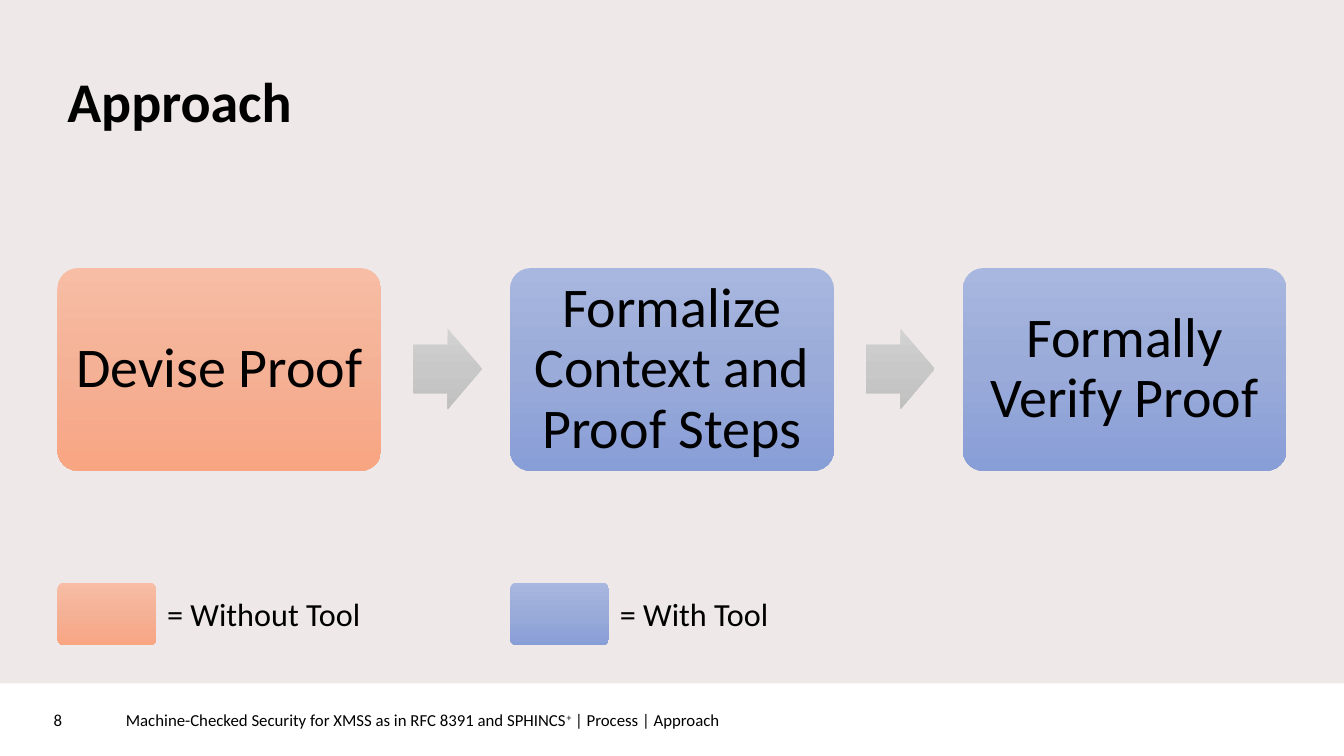
from copy import deepcopy
from dataclasses import dataclass

from pptx import Presentation
from pptx.dml.color import RGBColor
from pptx.enum.shapes import MSO_SHAPE as Preset
from pptx.enum.text import MSO_ANCHOR as Anchor, PP_ALIGN as Align
from pptx.oxml.ns import qn
from pptx.shapes.autoshape import Shape
from pptx.slide import Slide
from pptx.text.text import _Paragraph as Paragraph
from pptx.util import Emu, Pt

EMU_PER_PX = 9144
PAGE_WIDTH, PAGE_HEIGHT = 1333, 750
LEFT = 57
STEP_PITCH = 449
STEP_TOP, STEP_WIDTH, STEP_HEIGHT = 266, 321, 201
ARROW_OFFSET, ARROW_TOP, ARROW_WIDTH, ARROW_HEIGHT = 353, 326, 68, 80
KEY_TOP, KEY_WIDTH, KEY_HEIGHT = 578, 98, 62
FOOTER_TOP, NUMBER_WIDTH = 678, 115

ORANGE = ("F7BDA5", "F5B196", "F8A582")
BLUE = ("A8B7DF", "9AABD9", "889ED7")
GREY = ("D2D2D2", "C8C8C8", "C0C0C0")


@dataclass(frozen=True)
class Step:
    label: str
    shades: tuple[str, str, str]


@dataclass(frozen=True)
class Key:
    label: str
    shades: tuple[str, str, str]


STEPS = (
    Step("Devise Proof", ORANGE),
    Step("Formalize Context and Proof Steps", BLUE),
    Step("Formally Verify Proof", BLUE),
)
KEYS = (Key("= Without Tool", ORANGE), Key("= With Tool", BLUE))


def px(length: int) -> Emu:
    """Turn a length in px into EMU."""
    return Emu(length * EMU_PER_PX)


def colour(code: str) -> RGBColor:
    """Turn a hex string into a colour."""
    return RGBColor.from_string(code)


def add_preset(page: Slide, preset: Preset, left: int, top: int, width: int, height: int) -> Shape:
    """Add a preset shape without outline or shadow."""
    shape = page.shapes.add_shape(preset, px(left), px(top), px(width), px(height))
    shape.shadow.inherit = False
    shape.line.fill.background()
    return shape


def shade(shape: Shape, shades: tuple[str, str, str]) -> None:
    """Fill a shape from top to bottom with three evenly spaced colours."""
    fill = shape.fill
    fill.gradient()
    fill.gradient_angle = 270
    stop_list = shape._element.spPr.find(qn("a:gradFill")).find(qn("a:gsLst"))
    stop_list.insert(1, deepcopy(stop_list[0]))
    for stop, position, code in zip(fill.gradient_stops, (0, 0.5, 1), shades):
        stop.position = position
        stop.color.rgb = colour(code)


def write(shape: Shape, text: str, size: int, anchor: Anchor,
          align: Align = Align.LEFT, bold: bool = False) -> Paragraph:
    """Write one black paragraph in a shape and return it."""
    frame = shape.text_frame
    frame.word_wrap = True
    frame.vertical_anchor = anchor
    para = frame.paragraphs[0]
    para.text = text
    para.alignment = align
    para.font.name = "Calibri"
    para.font.size = Pt(size)
    para.font.bold = bold
    para.font.color.rgb = colour("000000")
    return para


def add_text(page: Slide, left: int, top: int, width: int, height: int,
             text: str, size: int, anchor: Anchor, bold: bool = False) -> Paragraph:
    """Add a text box with one paragraph and return the paragraph."""
    box = page.shapes.add_textbox(px(left), px(top), px(width), px(height))
    return write(box, text, size, anchor, bold=bold)


def add_step(page: Slide, step: Step, left: int) -> None:
    """Draw one process step."""
    box = add_preset(page, Preset.ROUNDED_RECTANGLE, left, STEP_TOP, STEP_WIDTH, STEP_HEIGHT)
    box.adjustments[0] = 0.1
    shade(box, step.shades)
    frame = box.text_frame
    frame.margin_left = frame.margin_right = frame.margin_top = frame.margin_bottom = px(2)
    write(box, step.label, 40, Anchor.MIDDLE, Align.CENTER).line_spacing = 0.9


def add_arrow(page: Slide, left: int) -> None:
    """Draw the arrow between two steps."""
    arrow = add_preset(page, Preset.RIGHT_ARROW, left, ARROW_TOP, ARROW_WIDTH, ARROW_HEIGHT)
    arrow.adjustments[0] = 0.6
    arrow.adjustments[1] = 0.5
    shade(arrow, GREY)


def add_key(page: Slide, key: Key, left: int) -> None:
    """Draw one legend swatch with its label."""
    swatch = add_preset(page, Preset.ROUNDED_RECTANGLE, left, KEY_TOP, KEY_WIDTH, KEY_HEIGHT)
    swatch.adjustments[0] = 0.1
    shade(swatch, key.shades)
    add_text(page, left + KEY_WIDTH + 1, KEY_TOP + 7, 213, 49, key.label, 23, Anchor.TOP)


def add_footer_part(page: Slide, left: int, width: int, text: str, align: Align) -> Paragraph:
    """Draw one white footer part and return its paragraph."""
    bar = add_preset(page, Preset.RECTANGLE, left, FOOTER_TOP, width, PAGE_HEIGHT - FOOTER_TOP)
    bar.fill.solid()
    bar.fill.fore_color.rgb = colour("FFFFFF")
    return write(bar, text, 12, Anchor.MIDDLE, align)


def add_footer(page: Slide) -> None:
    """Draw the running title and the page number."""
    title = "Machine-Checked Security for XMSS as in RFC 8391 and SPHINCS"
    para = add_footer_part(page, NUMBER_WIDTH, PAGE_WIDTH - NUMBER_WIDTH, title, Align.LEFT)
    plus = para.add_run()
    plus.text = "+"
    plus.font._element.set("baseline", "30000")
    para.add_run().text = " | Process | Approach"
    add_footer_part(page, 0, NUMBER_WIDTH, "8", Align.CENTER)


def main() -> None:
    """Build the slide and save it."""
    deck = Presentation()
    deck.slide_width, deck.slide_height = px(PAGE_WIDTH), px(PAGE_HEIGHT)
    page = deck.slides.add_slide(deck.slide_layouts[6])
    page.background.fill.solid()
    page.background.fill.fore_color.rgb = colour("EEE8E8")

    add_text(page, LEFT, 33, 1220, 106, "Approach", 40, Anchor.BOTTOM, bold=True).line_spacing = 0.9
    for index, step in enumerate(STEPS):
        left = LEFT + index * STEP_PITCH
        add_step(page, step, left)
        if index < len(STEPS) - 1:
            add_arrow(page, left + ARROW_OFFSET)
    add_footer(page)
    for index, key in enumerate(KEYS):
        add_key(page, key, LEFT + index * STEP_PITCH)
    deck.save("out.pptx")


if __name__ == "__main__":
    main()
